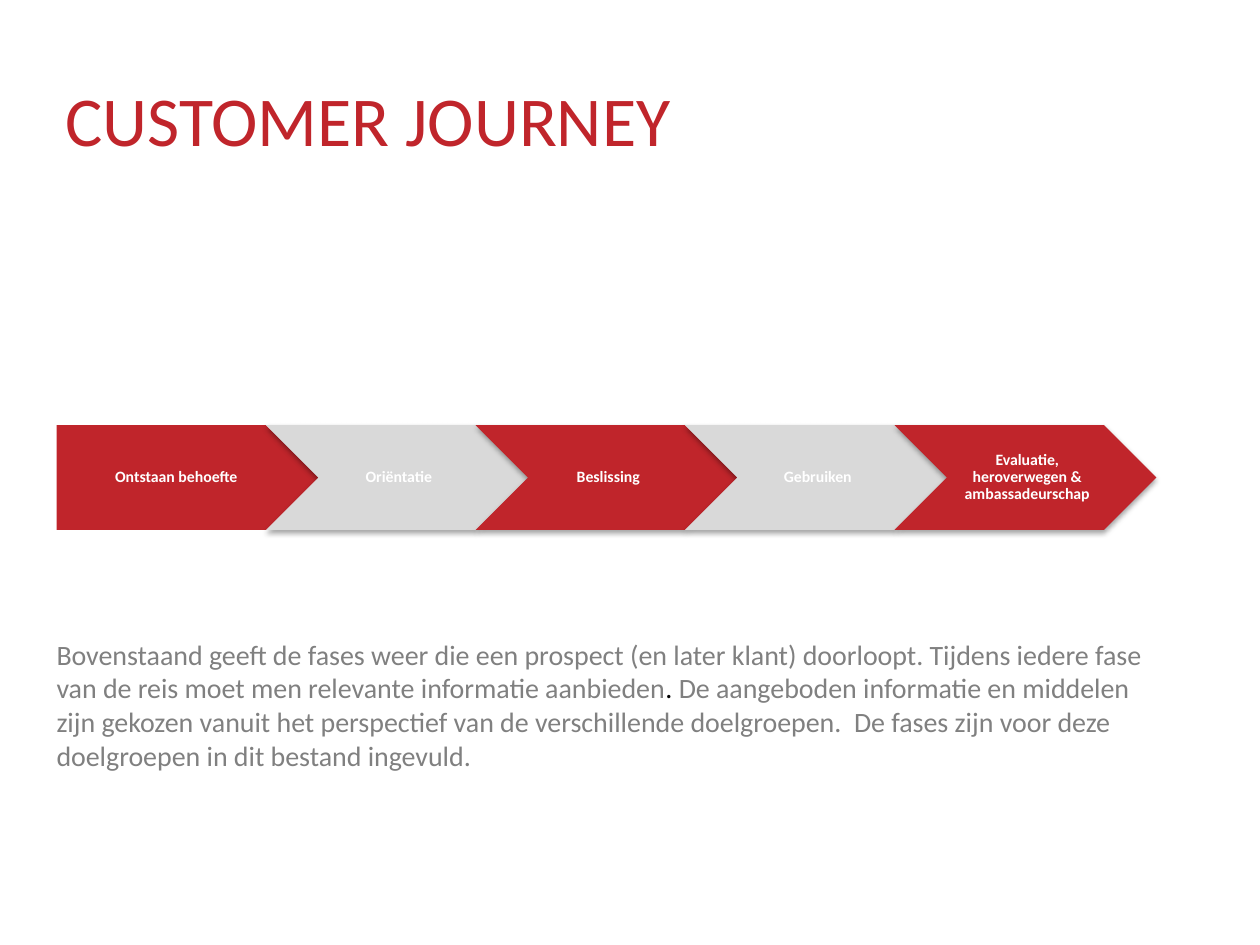
from lxml.etree import SubElement
from pptx import Presentation
from pptx.dml.color import RGBColor
from pptx.enum.shapes import MSO_SHAPE
from pptx.enum.text import MSO_ANCHOR, PP_ALIGN
from pptx.oxml.ns import qn
from pptx.util import Pt

RED = RGBColor(0xC0, 0x25, 0x2B)
LIGHT_GRAY = RGBColor(0xD9, 0xD9, 0xD9)
GRAY = RGBColor(0x80, 0x80, 0x80)
BLACK = RGBColor(0, 0, 0)
WHITE = RGBColor(0xFF, 0xFF, 0xFF)


def format_run(r, size, color, bold=False):
    r.font.name = "Calibri"
    r.font.size = Pt(size)
    r.font.color.rgb = color
    r.font.bold = bold


def add_shadow(sp):
    """Give the shape a soft black shadow straight below it."""
    sp.shadow.inherit = False
    effects = sp.element.spPr.find(qn("a:effectLst"))
    shadow = SubElement(effects, qn("a:outerShdw"), blurRad=str(Pt(3.1)),
                        dist=str(Pt(1.8)), dir="5400000", rotWithShape="0")
    color = SubElement(shadow, qn("a:srgbClr"), val="000000")
    SubElement(color, qn("a:alpha"), val="35000")


prs = Presentation()
prs.slide_width, prs.slide_height = Pt(720), Pt(540)
s = prs.slides.add_slide(prs.slide_layouts[6])

# Title
title = s.shapes.add_textbox(Pt(32.4), Pt(41), Pt(628), Pt(54))
tf = title.text_frame
tf.word_wrap = True
tf.margin_left = tf.margin_right = Pt(5.2)
tf.margin_top = tf.margin_bottom = Pt(2.6)
tf.text = "CUSTOMER JOURNEY"
format_run(tf.paragraphs[0].runs[0], 40, RED)

# Phases: overlapping arrows at an equal pitch, in alternating colours
PHASES = ["Ontstaan behoefte", "Oriëntatie", "Beslissing", "Gebruiken",
          "Evaluatie, heroverwegen & ambassadeurschap"]
LEFT, TOP, WIDTH, HEIGHT, PITCH = 32.4, 243, 149.6, 59.8, 119.7
for i, phase in enumerate(PHASES):
    kind = MSO_SHAPE.CHEVRON if i else MSO_SHAPE.PENTAGON
    sp = s.shapes.add_shape(kind, Pt(LEFT + i * PITCH), Pt(TOP), Pt(WIDTH), Pt(HEIGHT))
    sp.fill.solid()
    sp.fill.fore_color.rgb = LIGHT_GRAY if i % 2 else RED
    sp.line.fill.background()
    if i:
        add_shadow(sp)
    else:
        sp.shadow.inherit = False
    tf = sp.text_frame
    tf.word_wrap = True
    tf.vertical_anchor = MSO_ANCHOR.MIDDLE
    tf.margin_left, tf.margin_right = Pt(3), Pt(1)
    tf.margin_top = tf.margin_bottom = Pt(2)
    tf.text = phase
    p = tf.paragraphs[0]
    p.alignment = PP_ALIGN.CENTER
    p.line_spacing = 0.9
    format_run(p.runs[0], 9, WHITE, bold=True)

# Explanation
EXPLANATION = [
    ("Bovenstaand geeft de fases weer die een prospect (en later klant) doorloopt. "
     "Tijdens iedere fase van de reis moet men relevante informatie aanbieden", GRAY),
    (". ", BLACK),
    ("De aangeboden informatie en middelen zijn gekozen vanuit het perspectief van de "
     "verschillende doelgroepen.  De fases zijn voor deze doelgroepen in dit bestand "
     "ingevuld.", GRAY),
]
explanation = s.shapes.add_textbox(Pt(25.2), Pt(360.7), Pt(635), Pt(124))
tf = explanation.text_frame
tf.word_wrap = True
for text, color in EXPLANATION:
    r = tf.paragraphs[0].add_run()
    r.text = text
    format_run(r, 16, color)

prs.save("out.pptx")
